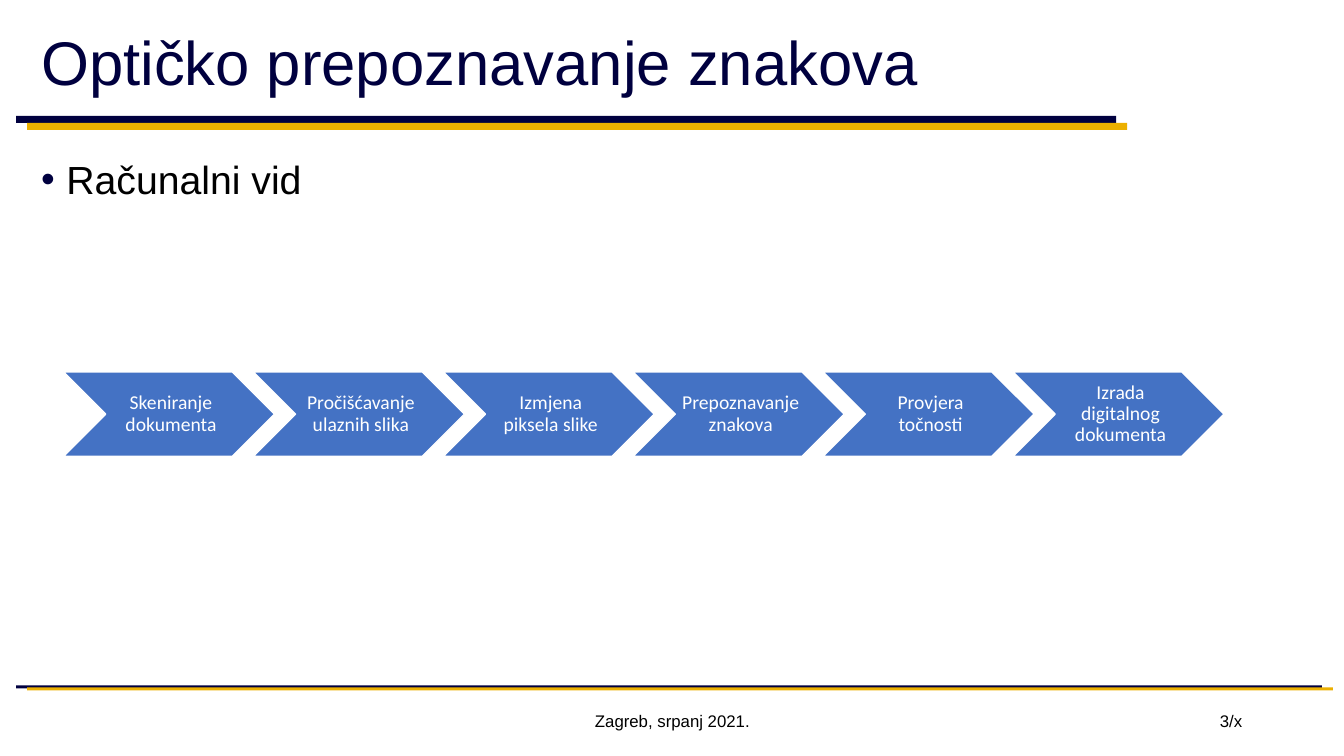
from lxml.etree import SubElement
from pptx import Presentation
from pptx.dml.color import RGBColor
from pptx.enum.shapes import MSO_SHAPE
from pptx.enum.text import MSO_ANCHOR, PP_ALIGN
from pptx.oxml.ns import qn
from pptx.util import Inches, Pt

NAVY, GOLD, BLUE, WHITE, BLACK = "00003F", "ECB000", "4472C4", "FFFFFF", "000000"
TITLE = "Optičko prepoznavanje znakova"
TOPIC = "Računalni vid"
FOOTER = "Zagreb, srpanj 2021."
PAGE_NUMBER = "3/x"
STEPS = [
    "Skeniranje dokumenta",
    "Pročišćavanje ulaznih slika",
    "Izmjena piksela slike",
    "Prepoznavanje znakova",
    "Provjera točnosti",
    "Izrada digitalnog dokumenta",
]
# Left, top, width, height and colour of each rule, in inches
RULES = [
    (0.16, 1.15, 10.91, 0.07, NAVY),
    (0.27, 1.22, 10.91, 0.07, GOLD),
    (0.16, 6.8, 12.95, 0.03, NAVY),
    (0.27, 6.82, 12.95, 0.03, GOLD),
]
CHAIN_LEFT, CHAIN_TOP, CHAIN_WIDTH = 0.63, 3.69, 11.51
STEP_PITCH = 0.9  # share of a chevron's width
CHEVRON_RATIO = 0.4  # height to width


def color(value):
    return RGBColor.from_string(value)


def add_bullet(para, value, indent):
    properties = para._p.get_or_add_pPr()
    properties.set("marL", str(Inches(indent)))
    properties.set("indent", str(-Inches(indent)))
    bullet_color = SubElement(properties, qn("a:buClr"))
    SubElement(bullet_color, qn("a:srgbClr")).set("val", value)
    SubElement(properties, qn("a:buFont")).set("typeface", "Arial")
    SubElement(properties, qn("a:buChar")).set("char", "•")


def write(shape, text, size, fill=BLACK, font="Arial", align=PP_ALIGN.LEFT,
          anchor=MSO_ANCHOR.MIDDLE, spacing=1.0, insets=(0.1, 0.05, 0.1, 0.05),
          bullet=None):
    frame = shape.text_frame
    frame.word_wrap = True
    frame.vertical_anchor = anchor
    (frame.margin_left, frame.margin_top,
     frame.margin_right, frame.margin_bottom) = map(Inches, insets)
    para = frame.paragraphs[0]
    para.alignment = align
    para.line_spacing = spacing
    if bullet:
        add_bullet(para, bullet, 0.25)
    span = para.add_run()
    span.text = text
    span.font.name = font
    span.font.size = Pt(size)
    span.font.color.rgb = color(fill)


def add_block(page, kind, left, top, width, height, fill, line=None):
    shape = page.shapes.add_shape(kind, *map(Inches, (left, top, width, height)))
    shape.shadow.inherit = False
    shape.fill.solid()
    shape.fill.fore_color.rgb = color(fill)
    if line:
        shape.line.color.rgb = color(line)
        shape.line.width = Pt(1)
    else:
        shape.line.fill.background()
    return shape


def add_text(page, left, top, width, height, text, size, **style):
    box = page.shapes.add_textbox(*map(Inches, (left, top, width, height)))
    write(box, text, size, **style)


def add_chain(page):
    width = CHAIN_WIDTH / ((len(STEPS) - 1) * STEP_PITCH + 1)
    for index, step in enumerate(STEPS):
        left = CHAIN_LEFT + index * width * STEP_PITCH
        chevron = add_block(page, MSO_SHAPE.CHEVRON, left, CHAIN_TOP, width,
                            width * CHEVRON_RATIO, BLUE, line=WHITE)
        write(chevron, step, 14, fill=WHITE, font="Calibri", align=PP_ALIGN.CENTER,
              spacing=0.9, insets=(0.05, 0.02, 0.01, 0.02))


def main():
    deck = Presentation()
    deck.slide_width, deck.slide_height = Inches(13.33), Inches(7.5)
    page = deck.slides.add_slide(deck.slide_layouts[6])
    for *place, fill in RULES:
        add_block(page, MSO_SHAPE.RECTANGLE, *place, fill)
    add_text(page, 0.31, 0.15, 10.75, 0.99, TITLE, 44, fill=NAVY, spacing=0.9)
    add_text(page, 0.31, 1.54, 12.72, 0.55, TOPIC, 28, spacing=0.9,
             anchor=MSO_ANCHOR.TOP, bullet=NAVY)
    add_text(page, 4.42, 6.95, 4.5, 0.4, FOOTER, 12, align=PP_ALIGN.CENTER)
    add_text(page, 9.42, 6.95, 3, 0.4, PAGE_NUMBER, 12, align=PP_ALIGN.RIGHT)
    add_chain(page)
    deck.save("out.pptx")


if __name__ == "__main__":
    main()
